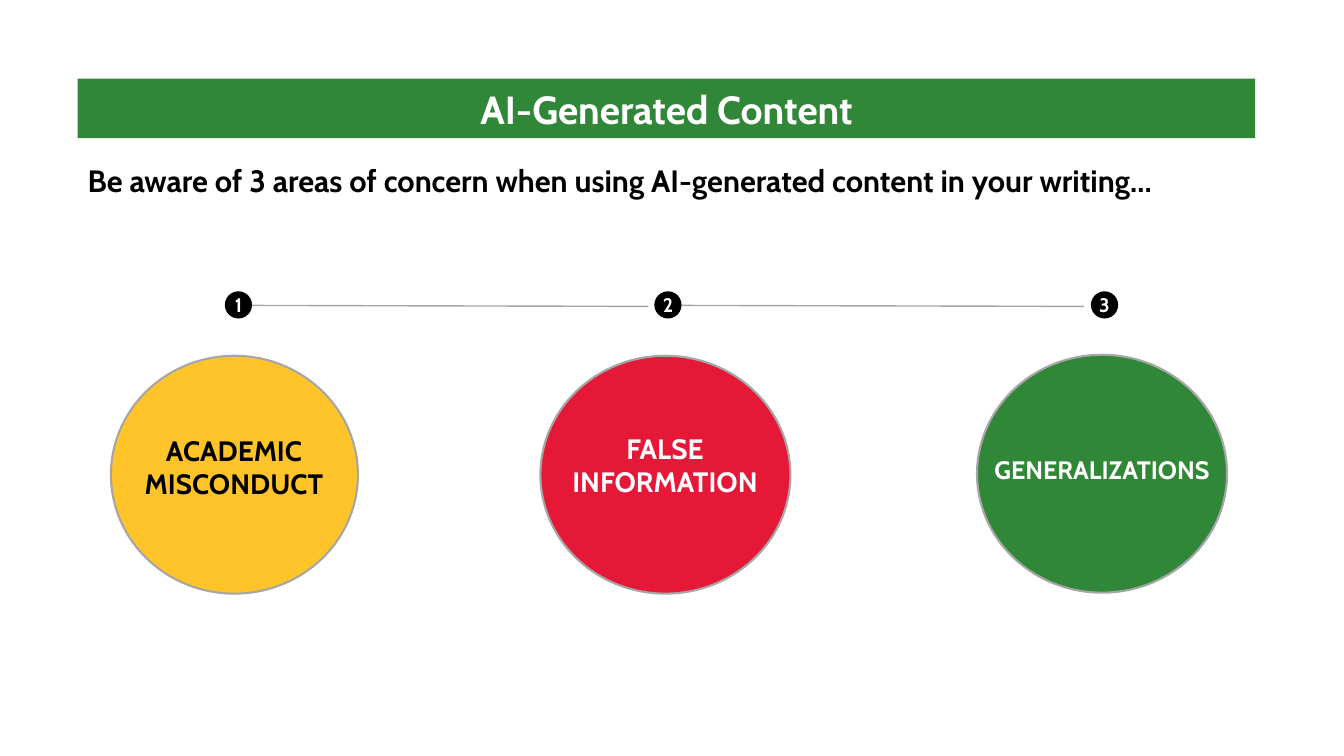
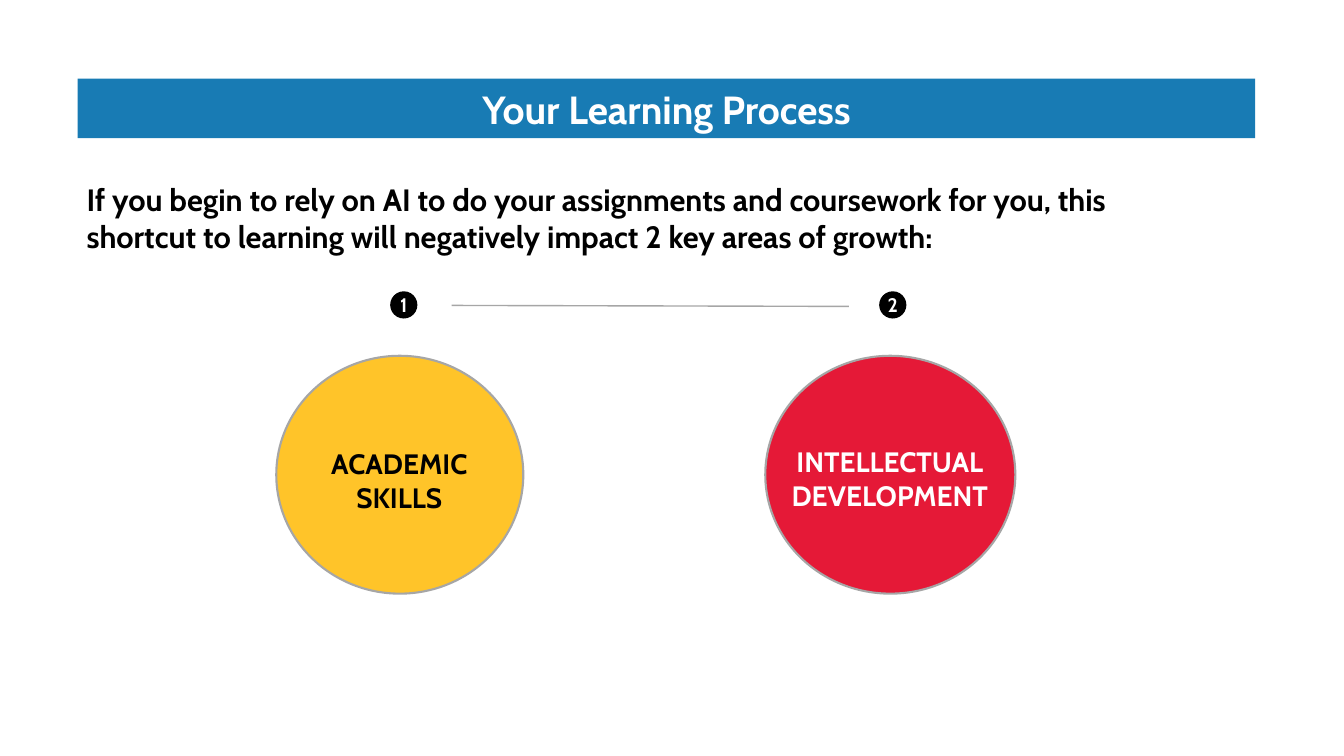
from pptx import Presentation
from pptx.dml.color import RGBColor
from pptx.enum.shapes import MSO_CONNECTOR as CONN, MSO_SHAPE as SHAPE
from pptx.enum.text import MSO_ANCHOR as ANCHOR, PP_ALIGN as ALIGN
from pptx.oxml.xmlchemy import OxmlElement
from pptx.util import Pt

PX = 9144  # 100 px to the inch
FONT = "Cabin"
GREEN, BLUE, RED, YELLOW = "318738", "187BB4", "E51937", "FFC429"
BLACK, WHITE, GRAY = "000000", "FFFFFF", "A6A6A6"
BAND = (77, 78, 1168, 59)
BADGE, BADGE_Y, BADGE_DX = 27, 289, 113
LINE_Y = 303


def px(*lengths):
    return [n * PX for n in lengths]


def rgb(color):
    return RGBColor.from_string(color)


def write(s, text, size, color, align=ALIGN.CENTER):
    tf = s.text_frame
    tf.word_wrap = True
    p = tf.paragraphs[0]
    p.text = text
    p.alignment = align
    p.font.name, p.font.size, p.font.bold = FONT, Pt(size), True
    p.font.color.rgb = rgb(color)
    return tf


def add_shape(slide, kind, box, fill, outline=None):
    s = slide.shapes.add_shape(kind, *px(*box))
    s.shadow.inherit = False
    s.fill.solid()
    s.fill.fore_color.rgb = rgb(fill)
    if outline:
        s.line.color.rgb = rgb(outline)
        s.line.width = Pt(1.5)
    else:
        s.line.fill.background()
    return s


def add_text(slide, box, *style):
    write(slide.shapes.add_textbox(*px(*box)), *style)


def add_title(slide, text, color):
    s = add_shape(slide, SHAPE.RECTANGLE, BAND, color)
    write(s, text, 28, WHITE).vertical_anchor = ANCHOR.MIDDLE


def add_badge(slide, x, y, number):
    s = add_shape(slide, SHAPE.OVAL, (x, y, BADGE, BADGE), BLACK)
    tf = write(s, str(number), 14, WHITE)
    tf.word_wrap = False
    tf.vertical_anchor = ANCHOR.MIDDLE
    tf.margin_left = tf.margin_right = tf.margin_top = tf.margin_bottom = 0


def add_link(slide, x1, x2):
    line = slide.shapes.add_connector(CONN.STRAIGHT, *px(x1, LINE_Y, x2, LINE_Y + 1))
    line.line.color.rgb = rgb(GRAY)
    line.line.width = Pt(1)
    line._element.spPr.append(OxmlElement("a:effectLst"))


def add_topic(slide, number, box, fill, label, label_dy, label_w, size=20):
    """Numbered badge above a circle, with a label centred on the circle."""
    x, y, w, h = box
    add_badge(slide, x + BADGE_DX, BADGE_Y, number)
    add_shape(slide, SHAPE.OVAL, box, fill, GRAY)
    label_box = (x + (w - label_w) // 2, y + label_dy, label_w, 120)
    add_text(slide, label_box, label, size, BLACK if fill == YELLOW else WHITE)


def add_topic_slide(prs, title, color, intro, intro_box, links, topics):
    slide = prs.slides.add_slide(prs.slide_layouts[6])
    add_title(slide, title, color)
    add_text(slide, intro_box, intro, 22, BLACK, ALIGN.LEFT)
    for link in links:
        add_link(slide, *link)
    for number, topic in enumerate(topics, 1):
        add_topic(slide, number, *topic)


def main():
    prs = Presentation()
    prs.slide_width, prs.slide_height = px(1333, 750)

    # Areas of concern
    add_topic_slide(
        prs, "AI-Generated Content", GREEN,
        "Be aware of 3 areas of concern when using AI-generated content in your writing…",
        (77, 156, 1168, 84),
        [(250, 643), (676, 1075)],
        [((110, 353, 245, 236), YELLOW, "ACADEMIC MISCONDUCT", 72, 242),
         ((536, 353, 248, 236), RED, "FALSE INFORMATION", 70, 249),
         ((969, 352, 248, 236), GREEN, "GENERALIZATIONS", 94, 310, 18)])

    # Areas of growth
    add_topic_slide(
        prs, "Your Learning Process", BLUE,
        "If you begin to rely on AI to do your assignments and coursework for you, "
        "this shortcut to learning will negatively impact 2 key areas of growth:",
        (76, 174, 1108, 84),
        [(448, 842)],
        [((274, 353, 245, 236), YELLOW, "ACADEMIC SKILLS", 85, 242),
         ((759, 353, 248, 236), RED, "INTELLECTUAL DEVELOPMENT", 83, 249)])

    prs.save("out.pptx")


if __name__ == "__main__":
    main()
